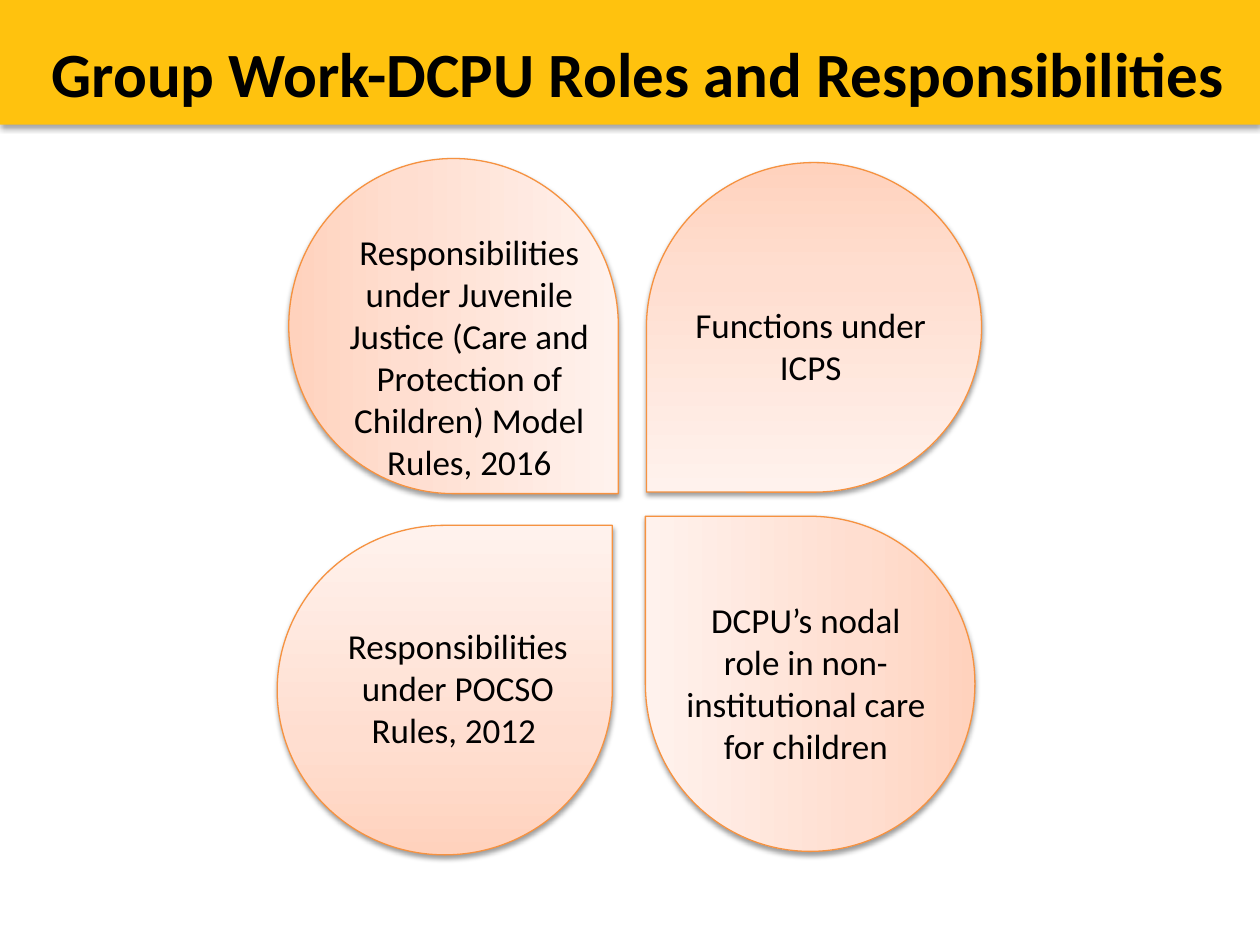
from copy import deepcopy

from lxml import etree
from pptx import Presentation
from pptx.dml.color import RGBColor
from pptx.enum.shapes import MSO_SHAPE
from pptx.enum.text import MSO_ANCHOR, MSO_AUTO_SIZE, PP_ALIGN
from pptx.oxml.ns import qn
from pptx.util import Pt

RECTANGLE, TEARDROP = MSO_SHAPE.RECTANGLE, MSO_SHAPE.TEAR
CENTER, TOP = PP_ALIGN.CENTER, MSO_ANCHOR.TOP
GROW, FIXED = MSO_AUTO_SIZE.SHAPE_TO_FIT_TEXT, MSO_AUTO_SIZE.NONE
BLACK = RGBColor(0x00, 0x00, 0x00)
GOLD = RGBColor(0xFF, 0xC2, 0x0E)
ORANGE = RGBColor(0xF6, 0x92, 0x40)
PEACH_STOPS = (
    (0, RGBColor(0xFF, 0xD2, 0xBD)),
    (0.35, RGBColor(0xFF, 0xDE, 0xD0)),
    (1, RGBColor(0xFF, 0xF2, 0xED)),
)
PETAL_SIZE = (191.5, 188.3)
LABEL_WIDTH = 153.4
PETALS = (
    ((158.4, 300.2), 0),
    ((369.4, 92.9), 180),
    ((163.4, 92.2), 90),
    ((367.2, 296.6), 270),
)
LABELS = (
    ((191.5, 128.2), 152.6, 0,
     "Responsibilities under Juvenile Justice (Care and Protection of Children) Model Rules, 2016"),
    ((386.6, 169.9), 55.4, 12, "Functions under ICPS"),
    ((185, 353.5), 79.9, 12, "Responsibilities under POCSO Rules, 2012 "),
    ((383.8, 338.4), 104.4, 12, "DCPU’s nodal role in non-institutional care for children"),
)


def apply_format(target, values):
    for name, value in values.items():
        setattr(target, name, value)


class SlideBuilder:
    font_name = "Calibri"

    def __init__(self, page):
        self.page = page

    def add_shape(self, kind, place, size, shadow_opacity, shadow_distance):
        shape = self.page.shapes.add_shape(kind, *map(Pt, place + size))
        shape.shadow.inherit = False
        effects = shape._element.spPr.find(qn("a:effectLst"))
        shadow = etree.SubElement(
            effects, qn("a:outerShdw"), blurRad=str(Pt(3.1)),
            dist=str(Pt(shadow_distance)), dir="5400000", rotWithShape="0")
        color = etree.SubElement(shadow, qn("a:srgbClr"), val=str(BLACK))
        etree.SubElement(color, qn("a:alpha"), val=str(shadow_opacity * 1000))
        return shape

    def add_banner(self, place, size):
        banner = self.add_shape(RECTANGLE, place, size, 35, 1.8)
        banner.fill.solid()
        banner.fill.fore_color.rgb = GOLD
        banner.line.fill.background()

    def add_petal(self, place, rotation):
        petal = self.add_shape(TEARDROP, place, PETAL_SIZE, 38, 1.6)
        petal.rotation = rotation
        petal.fill.gradient()
        petal.fill.gradient_angle = 90
        stop_list = petal._element.spPr.find(".//" + qn("a:gsLst"))
        stop_list.insert(1, deepcopy(stop_list[0]))
        for stop, (position, color) in zip(petal.fill.gradient_stops, PEACH_STOPS):
            stop.position = position
            stop.color.rgb = color
        petal.line.color.rgb = ORANGE
        petal.line.width = Pt(0.75)

    def add_text(self, place, size, spans, frame_format, space_after=0, bold=False):
        box = self.page.shapes.add_textbox(*map(Pt, place + size))
        frame = box.text_frame
        apply_format(frame, {"word_wrap": True, "vertical_anchor": TOP, **frame_format})
        para = frame.paragraphs[0]
        apply_format(para, {"alignment": CENTER, "space_after": Pt(space_after)})
        for text, points in spans:
            span = para.add_run()
            span.text = text
            apply_format(span.font, {"name": self.font_name, "size": Pt(points), "bold": bold})
            span.font.color.rgb = BLACK


def main():
    deck = Presentation()
    deck.slide_width, deck.slide_height = Pt(720), Pt(540)
    builder = SlideBuilder(deck.slides.add_slide(deck.slide_layouts[6]))
    builder.add_banner((0, 0), (720, 71.3))
    builder.add_text(
        (0, 9.4), (720, 47.5),
        ((" ", 40), ("Group Work-DCPU Roles and Responsibilities", 36)),
        {"auto_size": FIXED, "margin_top": Pt(6.2)}, bold=True)
    for place, rotation in PETALS:
        builder.add_petal(place, rotation)
    for place, height, space_after, text in LABELS:
        builder.add_text(place, (LABEL_WIDTH, height), ((text, 20),),
                         {"auto_size": GROW}, space_after)
    deck.save("out.pptx")


if __name__ == "__main__":
    main()
